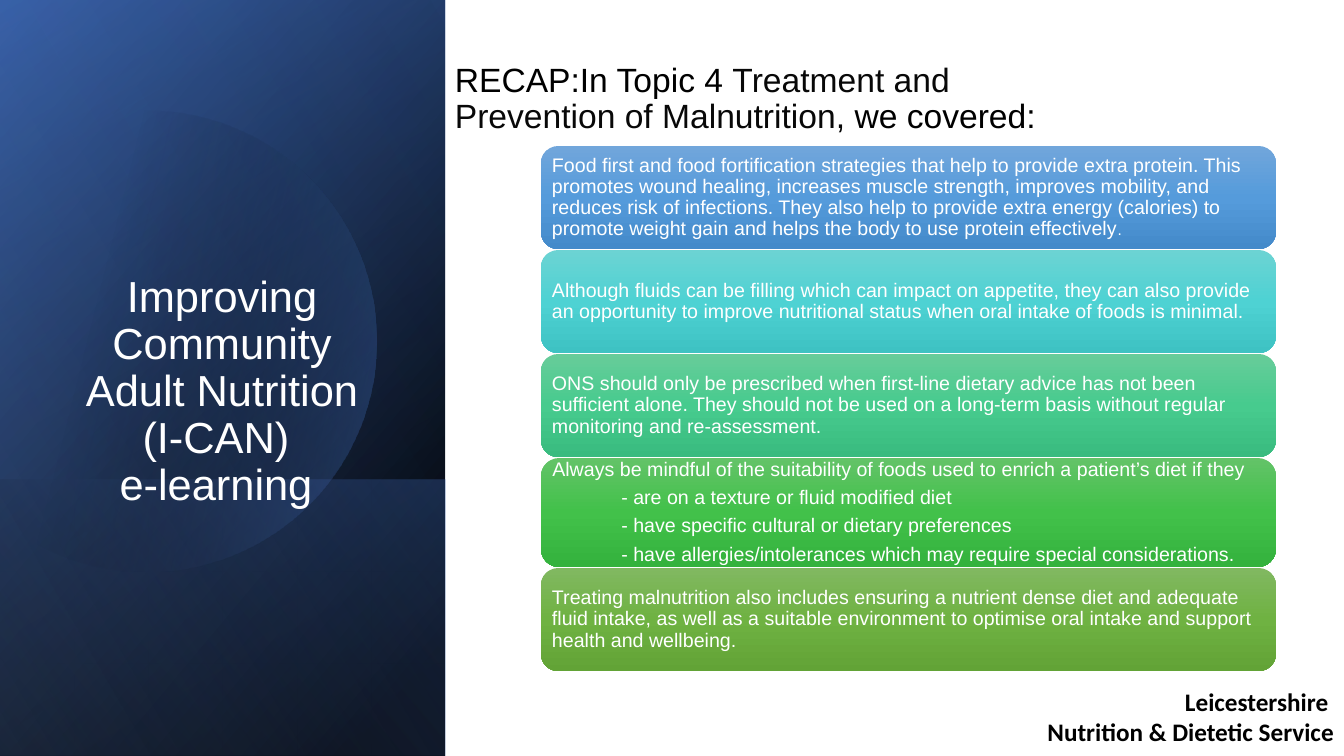
from math import acos, cos, sin
from lxml.etree import SubElement
from pptx import Presentation
from pptx.dml.color import RGBColor
from pptx.enum.shapes import MSO_SHAPE
from pptx.enum.text import MSO_ANCHOR, PP_ALIGN
from pptx.oxml.ns import qn
from pptx.util import Emu, Pt

SCALE = 914400 / 100.8
SIDE = 445
WHITE = "FFFFFF"
BLACK = "000000"
BLUE = "4472C4"

PANELS = [
    (0, 756, 50, [(8, BLACK, 100), (100, "2F5597", 100)]),
    (0, 756, 30, [(0, BLACK, 0), (99, BLUE, 46)]),
    (480, 276, 130, [(2, BLUE, 29), (100, BLACK, 30)]),
]
GLOW = (0, 756, 120, [(0, BLACK, 0), (99, "8FAADC", 11)])

CARDS = [
    (103, ["71A6DB", "559BDB", "448ACA"], [[
        ("Food first and food fortification strategies that help to provide extra protein. "
         "This promotes wound healing, increases muscle strength, improves mobility, and "
         "reduces risk of infections. They also help to provide extra energy (calories) to "
         "promote weight gain and helps the body to use protein effectively", {}),
        (".", {"size": 11})]]),
    (103, ["6CD3D3", "4ED2D3", "3EC2C3"], [
        "Although fluids can be filling which can impact on appetite, they can also provide "
        "an opportunity to improve nutritional status when oral intake of foods is minimal."]),
    (103, ["67CC9A", "47CB8E", "39BB7F"], [
        "ONS should only be prescribed when first-line dietary advice has not been "
        "sufficient alone. They should not be used on a long-term basis without regular "
        "monitoring and re-assessment."]),
    (109, ["63C368", "42C14A", "34B23D"], [
        "Always be mindful of the suitability of foods used to enrich a patient’s diet if they",
        "- are on a texture or fluid modified diet",
        "- have specific cultural or dietary preferences",
        "- have allergies/intolerances which may require special considerations."]),
    (103, ["81B861", "6FB242", "62A336"], [
        "Treating malnutrition also includes ensuring a nutrient dense diet and adequate "
        "fluid intake, as well as a suitable environment to optimise oral intake and support "
        "health and wellbeing."]),
]


def px(n):
    return Emu(round(n * SCALE))


def tint(code):
    return RGBColor.from_string(code)


def shade(shape, angle, stops):
    shape.shadow.inherit = False
    shape.line.fill.background()
    shape.fill.background()
    props = shape.fill._xPr
    old = props.find(qn("a:noFill"))
    grad = SubElement(props, qn("a:gradFill"), rotWithShape="1")
    props.replace(old, grad)
    ramp = SubElement(grad, qn("a:gsLst"))
    for place, code, alpha in stops:
        stop = SubElement(ramp, qn("a:gs"), pos=str(place * 1000))
        color = SubElement(stop, qn("a:srgbClr"), val=code)
        if alpha < 100:
            SubElement(color, qn("a:alpha"), val=str(alpha * 1000))
    SubElement(grad, qn("a:lin"), ang=str(angle * 60000), scaled="0")


def write(frame, lines, size=14, color=BLACK, font="Arial", bold=False,
          align=PP_ALIGN.LEFT, anchor=MSO_ANCHOR.TOP, space=0.9, after=0, indent=0):
    frame.word_wrap = True
    frame.vertical_anchor = anchor
    for i, line in enumerate(lines):
        para = frame.add_paragraph() if i else frame.paragraphs[0]
        para.alignment = align
        para.line_spacing = space
        para.space_after = Pt(after)
        if i and indent:
            para._p.get_or_add_pPr().set("marL", str(px(indent)))
        for words, form in [(line, {})] if isinstance(line, str) else line:
            for j, part in enumerate(words.split("\n")):
                if j:
                    para.add_line_break()
                run = para.add_run()
                run.text = part
                run.font.name = font
                run.font.bold = bold
                run.font.size = Pt(form.get("size", size))
                run.font.color.rgb = tint(form.get("color", color))


def label(slide, x, y, w, h, lines, **form):
    box = slide.shapes.add_textbox(px(x), px(y), px(w), px(h))
    write(box.text_frame, lines, **form)


def panel(slide, top, tall, angle, stops):
    x = (SIDE - tall) / 2
    y = top + (tall - SIDE) / 2
    shape = slide.shapes.add_shape(MSO_SHAPE.RECTANGLE, px(x), px(y), px(tall), px(SIDE))
    shape.rotation = 90
    shape._element.spPr.find(qn("a:xfrm")).set("flipH", "1")
    shade(shape, angle, stops)


def disc(slide, x, y, r, angle, stops):
    end = acos(-x / r)
    turns = [end * (i / 60 - 1) for i in range(121)]
    dots = [(round((x + r * cos(t)) * SCALE), round((y + r * sin(t)) * SCALE)) for t in turns]
    pen = slide.shapes.build_freeform(*dots[0])
    pen.add_line_segments(dots[1:], close=True)
    shade(pen.convert_to_shape(), angle, stops)


def card(slide, y, tall, codes, lines):
    shape = slide.shapes.add_shape(MSO_SHAPE.ROUNDED_RECTANGLE, px(541), px(y), px(735), px(tall))
    shade(shape, 90, [(i * 50, code, 100) for i, code in enumerate(codes)])
    frame = shape.text_frame
    frame.margin_left = frame.margin_right = px(6)
    frame.margin_top = frame.margin_bottom = 0
    write(frame, lines, color=WHITE, anchor=MSO_ANCHOR.MIDDLE, after=5, indent=69)


def main():
    deck = Presentation()
    deck.slide_width, deck.slide_height = px(1344), px(756)
    slide = deck.slides.add_slide(deck.slide_layouts[6])
    for item in PANELS:
        panel(slide, *item)
    disc(slide, 146, 341, 230, 14, [(29, BLACK, 0), (100, BLUE, 43)])
    panel(slide, *GLOW)
    label(slide, 50, 251, 344, 264,
          ["Improving Community Adult Nutrition (I-CAN) \ne-learning "],
          size=31, color=WHITE, align=PP_ALIGN.CENTER, anchor=MSO_ANCHOR.BOTTOM)
    y = 146
    for tall, codes, lines in CARDS:
        card(slide, y, tall, codes, lines)
        y += tall + 1
    label(slide, 445, 46, 604, 95, [[
        ("RECAP:In Topic 4 ", {}),
        ("Treatment and Prevention of Malnutrition, ", {"color": "080808"}),
        ("we covered:", {})]], size=24, anchor=MSO_ANCHOR.BOTTOM)
    label(slide, 515, 681, 829, 72, ["Leicestershire ", "Nutrition & Dietetic Service"],
          size=18, font="Calibri", bold=True, align=PP_ALIGN.RIGHT, space=1.0)
    deck.save("out.pptx")


if __name__ == "__main__":
    main()
